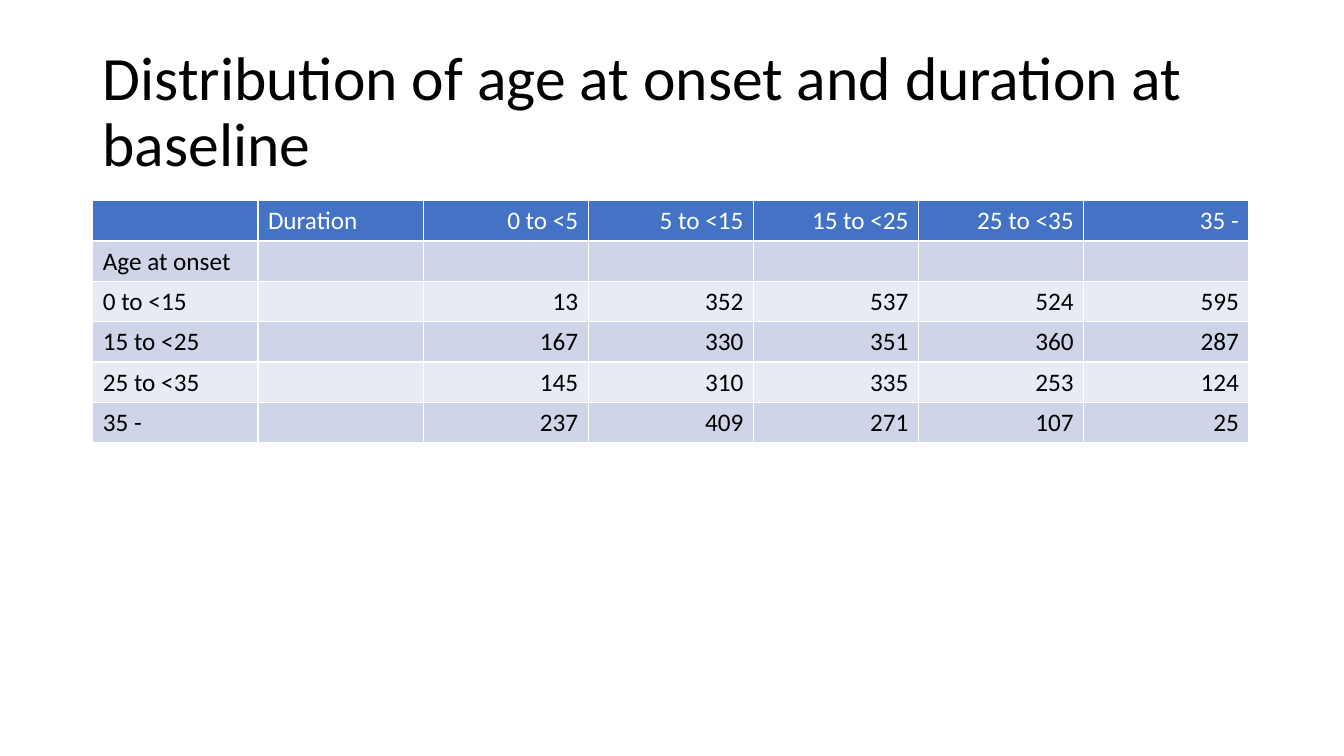
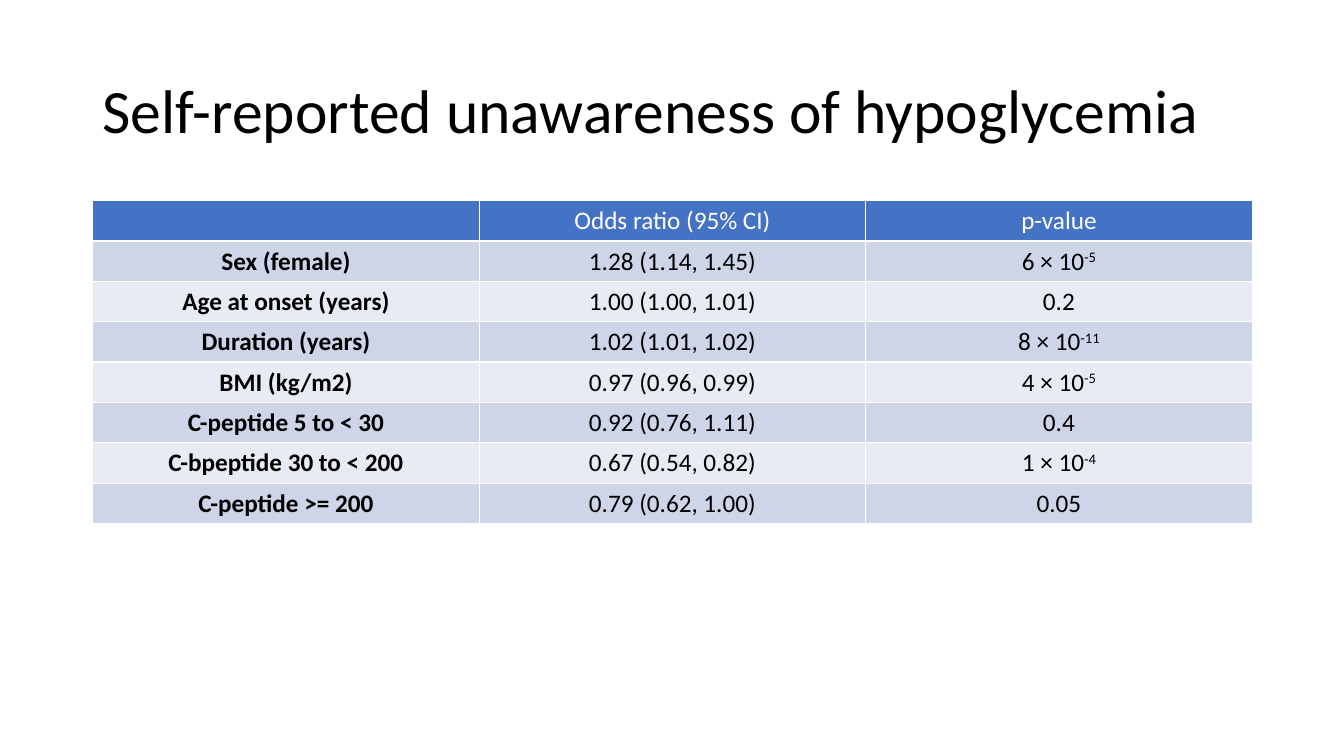
from dataclasses import dataclass

from lxml.etree import SubElement
from pptx import Presentation
from pptx.dml.color import RGBColor as Rgb
from pptx.enum.text import MSO_ANCHOR as Anchor, PP_ALIGN as Align
from pptx.oxml.ns import qn
from pptx.util import Inches, Pt


@dataclass(frozen=True)
class Theme:
    font: str = "Calibri"
    ink: str = "000000"
    paper: str = "FFFFFF"
    head: str = "4472C4"
    bands: tuple = ("CFD5E9", "E8EBF4")
    title: int = 44
    body: int = 18
    rule: int = 1


THEME = Theme()
LEFT = 0.92
TABLE_TOP = 1.99
ROW = 0.4

AGE_ROWS = [
    ["", "Duration", "0 to <5", "5 to <15", "15 to <25", "25 to <35", "35 -"],
    ["Age at onset"] + [""] * 6,
    ["0 to <15", "", "13", "352", "537", "524", "595"],
    ["15 to <25", "", "167", "330", "351", "360", "287"],
    ["25 to <35", "", "145", "310", "335", "253", "124"],
    ["35 -", "", "237", "409", "271", "107", "25"],
]
# A caret marks the start of a raised exponent.
ODDS_ROWS = [
    ["", "Odds ratio (95% CI)", "p-value"],
    ["Sex (female)", "1.28 (1.14, 1.45)", "6 × 10^-5"],
    ["Age at onset (years)", "1.00 (1.00, 1.01)", "0.2"],
    ["Duration (years)", "1.02 (1.01, 1.02)", "8 × 10^-11"],
    ["BMI (kg/m2)", "0.97 (0.96, 0.99)", "4 × 10^-5"],
    ["C-peptide 5 to < 30", "0.92 (0.76, 1.11)", "0.4"],
    ["C-bpeptide 30 to < 200", "0.67 (0.54, 0.82)", "1 × 10^-4"],
    ["C-peptide >= 200", "0.79 (0.62, 1.00)", "0.05"],
]


def set_all(item, values):
    for name, value in values.items():
        setattr(item, name, value)


def add_run(para, text, size, color, bold=False):
    run = para.add_run()
    run.text = text
    set_all(run.font, {"name": THEME.font, "size": Pt(size), "bold": bold})
    run.font.color.rgb = Rgb.from_string(color)
    return run


def add_title(slide, text):
    box = slide.shapes.add_textbox(
        Inches(LEFT), Inches(0.4), Inches(11.5), Inches(1.45))
    frame = box.text_frame
    set_all(frame, {"word_wrap": True, "vertical_anchor": Anchor.MIDDLE})
    para = frame.paragraphs[0]
    para.line_spacing = 0.9
    add_run(para, text, THEME.title, THEME.ink)


def add_rules(cell):
    """Draw the four cell borders; these must come before the fill."""
    props = cell._tc.get_or_add_tcPr()
    for side in ("a:lnL", "a:lnR", "a:lnT", "a:lnB"):
        line = SubElement(props, qn(side), w=str(Pt(THEME.rule)))
        fill = SubElement(line, qn("a:solidFill"))
        SubElement(fill, qn("a:srgbClr"), val=THEME.paper)


def fill_cell(cell, text, back, color, align, bold):
    add_rules(cell)
    cell.fill.solid()
    cell.fill.fore_color.rgb = Rgb.from_string(back)
    para = cell.text_frame.paragraphs[0]
    set_all(para, {"alignment": align})
    set_all(para.font, {"name": THEME.font, "size": Pt(THEME.body)})
    base, _, power = text.partition("^")
    if base:
        add_run(para, base, THEME.body, color, bold)
    if power:
        run = add_run(para, power, THEME.body, color, bold)
        run._r.get_or_add_rPr().set("baseline", "30000")


def add_grid(slide, rows, width, aligns, bold_first=False):
    """Add a banded table with equal columns, one alignment for each."""
    count = len(aligns)
    frame = slide.shapes.add_table(
        len(rows), count, Inches(LEFT), Inches(TABLE_TOP),
        Inches(width), Inches(ROW * len(rows)))
    table = frame.table
    set_all(table, {"first_row": False, "horz_banding": False})
    for col in table.columns:
        col.width = Inches(width / count)
    for i, row in enumerate(rows):
        back = THEME.bands[(i - 1) % 2] if i else THEME.head
        color = THEME.ink if i else THEME.paper
        for j, text in enumerate(row):
            bold = bold_first and i > 0 and j == 0
            fill_cell(table.cell(i, j), text, back, color, aligns[j], bold)


def main():
    deck = Presentation()
    set_all(deck, {"slide_width": Inches(13.33), "slide_height": Inches(7.5)})
    blank = deck.slide_layouts[6]

    slide = deck.slides.add_slide(blank)
    add_title(slide, "Distribution of age at onset and duration at baseline")
    add_grid(slide, AGE_ROWS, 11.47, [Align.LEFT] * 2 + [Align.RIGHT] * 5)

    slide = deck.slides.add_slide(blank)
    add_title(slide, "Self-reported unawareness of hypoglycemia")
    add_grid(slide, ODDS_ROWS, 11.5, [Align.CENTER] * 3, bold_first=True)

    deck.save("out.pptx")


if __name__ == "__main__":
    main()
